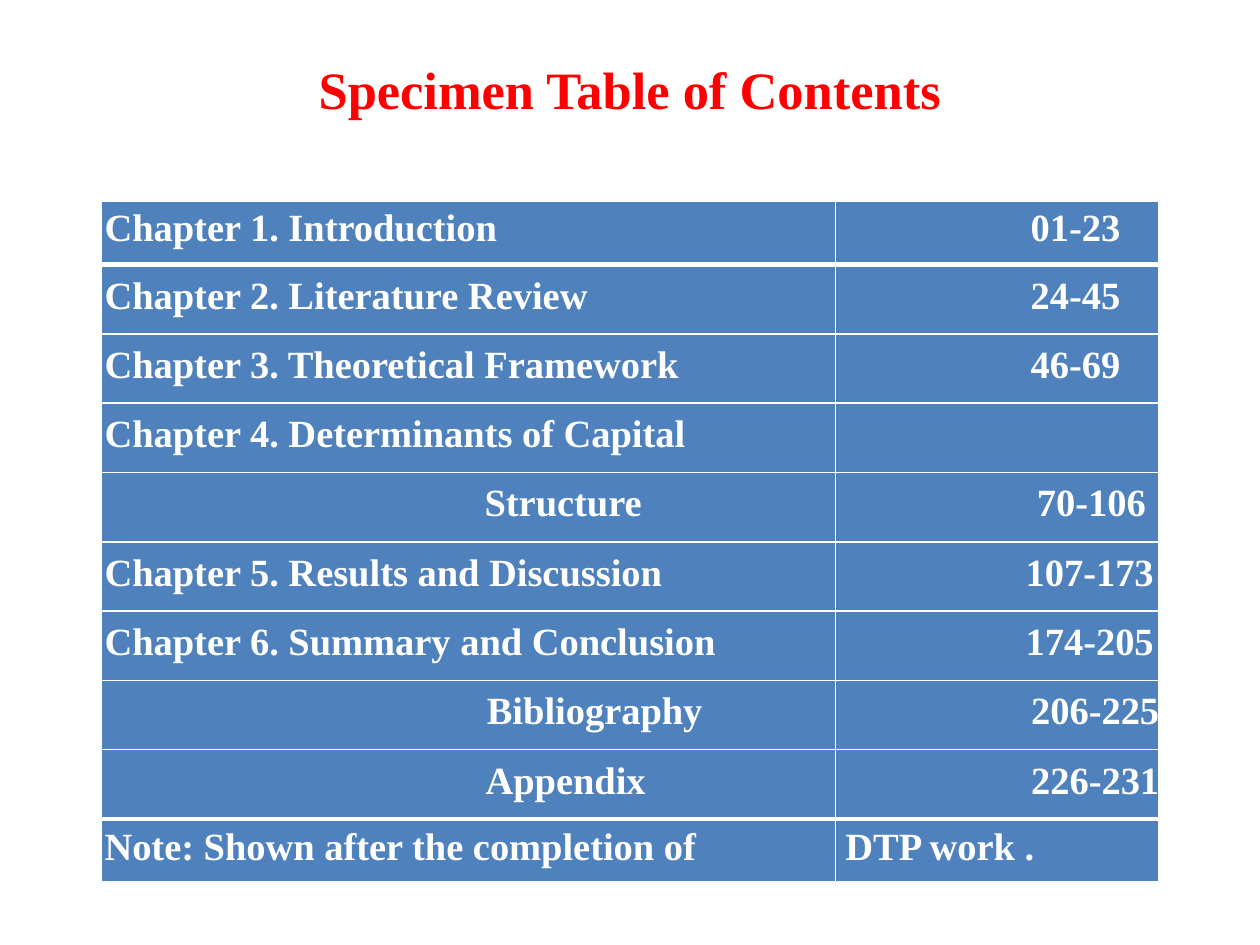
from dataclasses import dataclass

from lxml import etree
from pptx import Presentation
from pptx.dml.color import RGBColor
from pptx.enum.text import MSO_ANCHOR, PP_ALIGN
from pptx.oxml.ns import qn
from pptx.util import Inches, Pt


@dataclass(frozen=True)
class Theme:
    font: str = "Times New Roman"
    title_color: RGBColor = RGBColor(0xFF, 0x00, 0x00)
    text_color: RGBColor = RGBColor(0xFF, 0xFF, 0xFF)
    cell_color: RGBColor = RGBColor(0x4F, 0x81, 0xBD)
    rule_color: str = "FFFFFF"
    title_size: int = 30
    text_size: int = 22
    thin_rule: int = 1
    thick_rule: int = 3


THEME = Theme()
LEFT, CENTER, RIGHT = PP_ALIGN.LEFT, PP_ALIGN.CENTER, PP_ALIGN.RIGHT

COLUMN_WIDTHS = (5.83, 2.57)
END_ROW_HEIGHT, ROW_HEIGHT = 0.5, 0.55
FIRST_SPACING, SPACING, NOTE_SPACING = 27.5, 30.2, 28.7

# Each cell: text, alignment, left indent in inches
CONTENTS = [
    (("Chapter 1. Introduction", LEFT, 0.03), ("01-23", LEFT, 1.55)),
    (("Chapter 2. Literature Review", LEFT, 0.03), ("24-45", LEFT, 1.55)),
    (("Chapter 3. Theoretical Framework", LEFT, 0.03), ("46-69", LEFT, 1.55)),
    (("Chapter 4. Determinants of Capital", LEFT, 0.03), None),
    (("Structure", CENTER, 1.51), ("70-106", LEFT, 1.6)),
    (("Chapter 5. Results and Discussion", LEFT, 0.03), ("107-173", LEFT, 1.51)),
    (("Chapter 6. Summary and Conclusion", LEFT, 0.03), ("174-205", LEFT, 1.51)),
    (("Bibliography", CENTER, 2.01), ("206-225", RIGHT, 0.03)),
    (("Appendix", CENTER, 1.55), ("226-231", RIGHT, 0.03)),
    (("Note: Shown after the completion of", LEFT, 0.03), ("DTP work .", LEFT, 0.08)),
]


def add_run(paragraph, text, size, color):
    run = paragraph.add_run()
    run.text = text
    run.font.name = THEME.font
    run.font.size = Pt(size)
    run.font.bold = True
    run.font.color.rgb = color


def place_title(title, left, top, width, height):
    title.left, title.top = Inches(left), Inches(top)
    title.width, title.height = Inches(width), Inches(height)
    frame = title.text_frame
    frame.word_wrap = True
    frame.vertical_anchor = MSO_ANCHOR.MIDDLE
    frame.margin_bottom = Inches(0.5)
    paragraph = frame.paragraphs[0]
    paragraph.alignment = CENTER
    add_run(paragraph, "Specimen Table of Contents", THEME.title_size, THEME.title_color)


def set_borders(cell, top, bottom):
    """Rule all four sides; must come before the fill in the cell's XML."""
    properties = cell._tc.get_or_add_tcPr()
    widths = {"L": THEME.thin_rule, "R": THEME.thin_rule, "T": top, "B": bottom}
    for side, width in widths.items():
        line = etree.SubElement(properties, qn(f"a:ln{side}"), w=str(Pt(width)))
        fill = etree.SubElement(line, qn("a:solidFill"))
        etree.SubElement(fill, qn("a:srgbClr"), val=THEME.rule_color)


def write_cell(cell, text, alignment, indent, spacing):
    cell.margin_left = cell.margin_right = 0
    cell.margin_top = cell.margin_bottom = 0
    paragraph = cell.text_frame.paragraphs[0]
    paragraph.alignment = alignment
    paragraph.line_spacing = Pt(spacing)
    paragraph._p.get_or_add_pPr().set("marL", str(Inches(indent)))
    add_run(paragraph, text, THEME.text_size, THEME.text_color)


def add_contents_table(slide, left, top, width, height):
    last = len(CONTENTS) - 1
    table = slide.shapes.add_table(
        len(CONTENTS), len(COLUMN_WIDTHS),
        Inches(left), Inches(top), Inches(width), Inches(height),
    ).table
    for column, column_width in zip(table.columns, COLUMN_WIDTHS):
        column.width = Inches(column_width)

    spacings = {0: FIRST_SPACING, last: NOTE_SPACING}
    thick_edges = (1, last)  # below the first row and above the note
    for index, entries in enumerate(CONTENTS):
        table.rows[index].height = Inches(END_ROW_HEIGHT if index in (0, last) else ROW_HEIGHT)
        above, below = (
            THEME.thick_rule if edge in thick_edges else THEME.thin_rule
            for edge in (index, index + 1)
        )
        for column, entry in enumerate(entries):
            cell = table.cell(index, column)
            set_borders(cell, above, below)
            cell.fill.solid()
            cell.fill.fore_color.rgb = THEME.cell_color
            if entry:
                write_cell(cell, *entry, spacings.get(index, SPACING))


def main():
    presentation = Presentation()
    presentation.slide_width, presentation.slide_height = Inches(10), Inches(7.5)
    slide = presentation.slides.add_slide(presentation.slide_layouts.get_by_name("Title Only"))
    place_title(slide.shapes.title, 0.5, 0.3, 9, 1.25)
    add_contents_table(slide, 0.8, 1.6, 8.4, 5.4)
    presentation.save("out.pptx")


if __name__ == "__main__":
    main()
